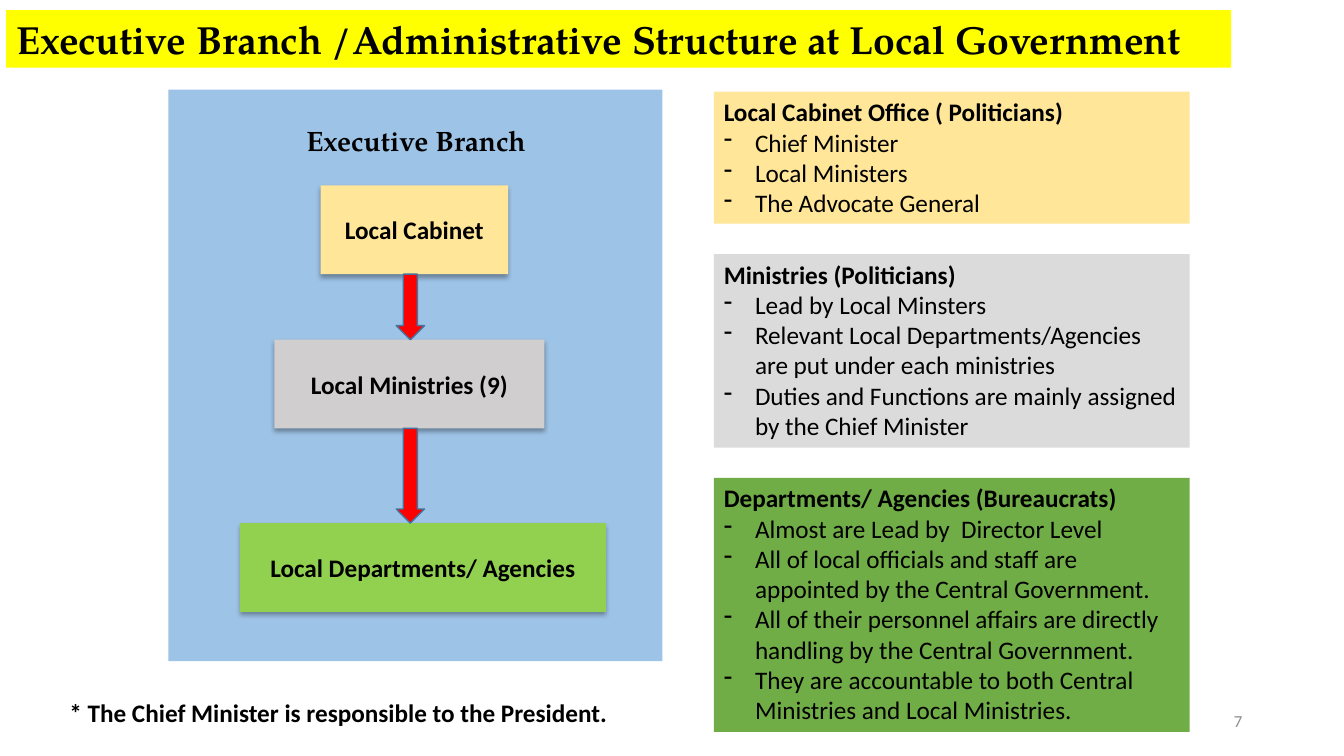
from itertools import pairwise
from lxml.etree import SubElement as Sub
from pptx import Presentation
from pptx.dml.color import RGBColor
from pptx.enum.shapes import MSO_SHAPE as Shape
from pptx.enum.text import MSO_ANCHOR as Anchor, MSO_AUTO_SIZE as Auto, PP_ALIGN as Align
from pptx.oxml.ns import qn
from pptx.util import Pt

# Content
TITLE = "Executive Branch /Administrative Structure at Local Government"
HEAD = "Executive Branch"
NOTE = "* The Chief Minister is responsible to the President."
PAGE = "7"
STEPS = [  # text, left, top, width, fill
    ("Local Cabinet", 318, 184, 186, "FFE699"),
    ("Local Ministries (9)", 272, 337, 268, "D0CECE"),
    ("Local Departments/ Agencies", 238, 519, 363, "92D050"),
]
CARDS = [  # heading, points, height, fill
    ("Local Cabinet Office ( Politicians)",
     ["Chief Minister", "Local Ministers", "The Advocate General"], 131, "FFE699"),
    ("Ministries (Politicians)",
     ["Lead by Local Minsters",
      "Relevant Local Departments/Agencies are put under each ministries",
      "Duties and Functions are mainly assigned by the Chief Minister"], 192, "DBDBDB"),
    ("Departments/ Agencies (Bureaucrats)",
     ["Almost are Lead by  Director Level",
      "All of local officials and staff are appointed by the Central Government.",
      "All of their personnel affairs are directly handling by the Central Government.",
      "They are accountable to both Central Ministries and Local Ministries."], 252, "70AD47"),
]

# Layout in px, 100 to the inch
PX = 9144
STEP_H = 88
ARROW_X, ARROW_W = 393, 28
CARD_X, CARD_Y, CARD_W, GAP = 708, 91, 472, 30
INDENT = 31
SERIF, SANS = "TeX Gyre Pagella", "Calibri"


def emu(*px):
    return [n * PX for n in px]


def color(code):
    return RGBColor.from_string(code)


def paint(shape, code):
    shape.fill.solid()
    shape.fill.fore_color.rgb = color(code)


def style(para, size=18, face=SANS, bold=True, code="000000", align=Align.LEFT):
    para.alignment = align
    for run in para.runs:
        font = run.font
        font.size, font.name, font.bold = Pt(size), face, bold
        font.color.rgb = color(code)


def block(kind, box, code):
    shape = slide.shapes.add_shape(kind, *emu(*box))
    shape.shadow.inherit = False
    paint(shape, code)
    shape.line.fill.background()
    return shape


def label(text, box, **look):
    frame = slide.shapes.add_textbox(*emu(*box)).text_frame
    frame.word_wrap = True
    frame.text = text
    style(frame.paragraphs[0], **look)
    return frame


def shade(shape):
    fx = shape._element.spPr.find(qn("a:effectLst"))
    drop = Sub(fx, qn("a:outerShdw"), blurRad="44450", dist="27940",
               dir="5400000", algn="t", rotWithShape="0")
    tone = Sub(drop, qn("a:srgbClr"), val="000000")
    Sub(tone, qn("a:alpha"), val="32000")


def dash(para):
    props = para._p.get_or_add_pPr()
    props.set("marL", str(INDENT * PX))
    props.set("indent", str(-INDENT * PX))
    Sub(props, qn("a:buFontTx"))
    Sub(props, qn("a:buChar"), char="-")


deck = Presentation()
deck.slide_width, deck.slide_height = emu(1333, 750)
slide = deck.slides.add_slide(deck.slide_layouts[5])

# Title
title = slide.shapes.title
title.left, title.top, title.width, title.height = emu(6, 10, 1215, 57)
paint(title, "FFFF00")
frame = title.text_frame
frame.text = TITLE
frame.auto_size = Auto.NONE
frame.vertical_anchor = Anchor.TOP
frame.paragraphs[0].line_spacing = 1.0
style(frame.paragraphs[0], 28, SERIF)

# Chain of command
block(Shape.RECTANGLE, (167, 89, 490, 567), "9DC3E6")
label(HEAD, (294, 118, 258, 44), size=20, face=SERIF)
for text, left, top, width, code in STEPS:
    step = block(Shape.RECTANGLE, (left, top, width, STEP_H), code)
    shade(step)
    step.text_frame.text = text
    step.text_frame.vertical_anchor = Anchor.MIDDLE
    style(step.text_frame.paragraphs[0], align=Align.CENTER)
for upper, lower in pairwise(STEPS):
    start = upper[2] + STEP_H
    arrow = block(Shape.DOWN_ARROW, (ARROW_X, start, ARROW_W, lower[2] - start), "FF0000")
    arrow.line.color.rgb = color("43739E")
    arrow.line.width = Pt(1)

# Explanation cards
top = CARD_Y
for head, points, height, code in CARDS:
    card = block(Shape.RECTANGLE, (CARD_X, top, CARD_W, height), code)
    frame = card.text_frame
    frame.vertical_anchor = Anchor.TOP
    frame.text = "\n".join([head, *points])
    first, *rest = frame.paragraphs
    style(first)
    for para in rest:
        style(para, bold=False)
        dash(para)
    top += height + GAP

# Footnote and page number
label(NOTE, (59, 687, 1109, 40))
page = label(PAGE, (942, 695, 300, 40), size=12, bold=False, code="8C8C8C", align=Align.RIGHT)
page.vertical_anchor = Anchor.MIDDLE

deck.save("out.pptx")
